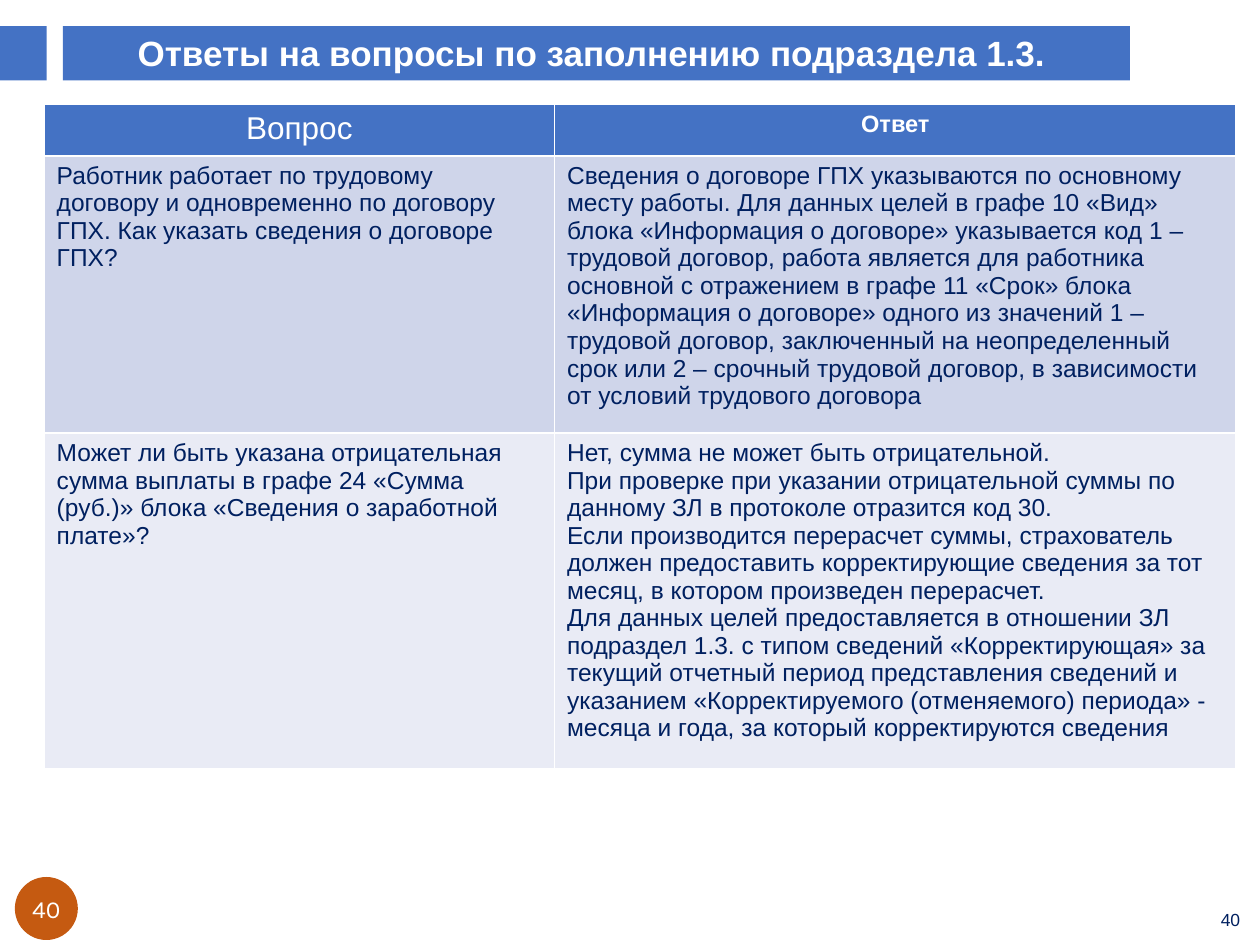
"""Build a slide that answers questions on filling in subsection 1.3."""
from pptx import Presentation
from pptx.dml.color import RGBColor
from pptx.enum import shapes, text
from pptx.util import Cm, Pt

HUES = {"blue": "4472C4", "navy": "002060", "rust": "C55A11",
        "white": "FFFFFF", "dark": "CFD5EA", "light": "E9EBF5"}
TITLE = "Ответы на вопросы по заполнению подраздела 1.3. "
PAGE = "40"
HEADS = [("Вопрос", 18, False), ("Ответ", 13.5, True)]
ROWS = [
    (["Работник работает по трудовому договору и одновременно по договору ГПХ. "
      "Как указать сведения о договоре ГПХ?"],
     ["Сведения о договоре ГПХ указываются по основному месту работы. "
      "Для данных целей в графе 10 «Вид» блока «Информация о договоре» "
      "указывается код 1 – трудовой договор, работа является для работника "
      "основной с отражением в графе 11 «Срок» блока «Информация о договоре» "
      "одного из значений 1 – трудовой договор, заключенный на неопределенный "
      "срок или 2 – срочный трудовой договор, в зависимости от условий "
      "трудового договора"]),
    (["Может ли быть указана отрицательная сумма выплаты в графе 24 "
      "«Сумма (руб.)» блока «Сведения о заработной плате»?"],
     ["Нет, сумма не может быть отрицательной.",
      "При проверке при указании отрицательной суммы по данному ЗЛ "
      "в протоколе отразится код 30.",
      "Если производится перерасчет суммы, страхователь должен предоставить "
      "корректирующие сведения за тот месяц, в котором произведен перерасчет.",
      "Для данных целей предоставляется в отношении ЗЛ подраздел 1.3. "
      "с типом сведений «Корректирующая» за текущий отчетный период "
      "представления сведений и указанием «Корректируемого (отменяемого) "
      "периода» - месяца и года, за который корректируются сведения"]),
]
WIDTHS = [10.29, 13.74]
HEIGHTS = [1.03, 5.59, 6.76]
BAR = (1.27, 0.53, 21.51, 1.09)
TAB = (0, 0.53, 0.94, 1.09)
BADGE = (0.3, 17.68, 1.27, 1.27)
NUMBER = (24.31, 18.14, 0.99, 0.79)
CENTER = text.PP_ALIGN.CENTER
MIDDLE = text.MSO_ANCHOR.MIDDLE


def hue(name):
    return RGBColor.from_string(HUES[name])


def paint(item, name):
    item.fill.solid()
    item.fill.fore_color.rgb = hue(name)


def write(frame, lines, size, name, bold=False, align=None, font="Arial"):
    frame.text = "\n".join(lines)
    for para in frame.paragraphs:
        para.alignment = align
        para.font.size, para.font.bold = Pt(size), bold
        para.font.name, para.font.color.rgb = font, hue(name)


def inset(frame, gap, anchor):
    frame.margin_left = frame.margin_right = Cm(gap)
    frame.margin_top = frame.margin_bottom = Cm(gap)
    frame.vertical_anchor = anchor
    frame.auto_size = text.MSO_AUTO_SIZE.NONE
    frame.word_wrap = True


def draw(slide, kind, box, name):
    shape = slide.shapes.add_shape(kind, *map(Cm, box))
    shape.shadow.inherit = False
    paint(shape, name)
    shape.line.fill.background()
    return shape


def head(slide):
    for box in (BAR, TAB):
        draw(slide, shapes.MSO_SHAPE.RECTANGLE, box, "blue")
    title = slide.shapes.title
    title.left, title.top, title.width, title.height = map(Cm, BAR)
    inset(title.text_frame, 0.1, text.MSO_ANCHOR.TOP)
    write(title.text_frame, [TITLE], 20, "white", True, CENTER)
    title.element.getparent().append(title.element)


def fill(slide):
    box = (0.89, 2.11, sum(WIDTHS), sum(HEIGHTS))
    grid = slide.shapes.add_table(len(HEIGHTS), len(WIDTHS), *map(Cm, box)).table
    for col, width in zip(grid.columns, WIDTHS):
        col.width = Cm(width)
    for row, height in zip(grid.rows, HEIGHTS):
        row.height = Cm(height)
    for cell, (label, size, bold) in zip(grid.rows[0].cells, HEADS):
        paint(cell, "blue")
        write(cell.text_frame, [label], size, "white", bold, CENTER)
    for i, pair in enumerate(ROWS, 1):
        for cell, lines in zip(grid.rows[i].cells, pair):
            paint(cell, "dark" if i % 2 else "light")
            write(cell.text_frame, lines, 14, "navy")


def foot(slide):
    badge = draw(slide, shapes.MSO_SHAPE.OVAL, BADGE, "rust")
    inset(badge.text_frame, 0, MIDDLE)
    write(badge.text_frame, [PAGE], 14, "white", align=CENTER, font="Karla")
    number = slide.shapes.add_textbox(*map(Cm, NUMBER))
    inset(number.text_frame, 0.18, MIDDLE)
    write(number.text_frame, [PAGE], 10, "navy", align=CENTER)


def main():
    deck = Presentation()
    deck.slide_width, deck.slide_height = Cm(25.4), Cm(19.05)
    slide = deck.slides.add_slide(deck.slide_layouts[5])
    head(slide)
    fill(slide)
    foot(slide)
    deck.save("out.pptx")


if __name__ == "__main__":
    main()
